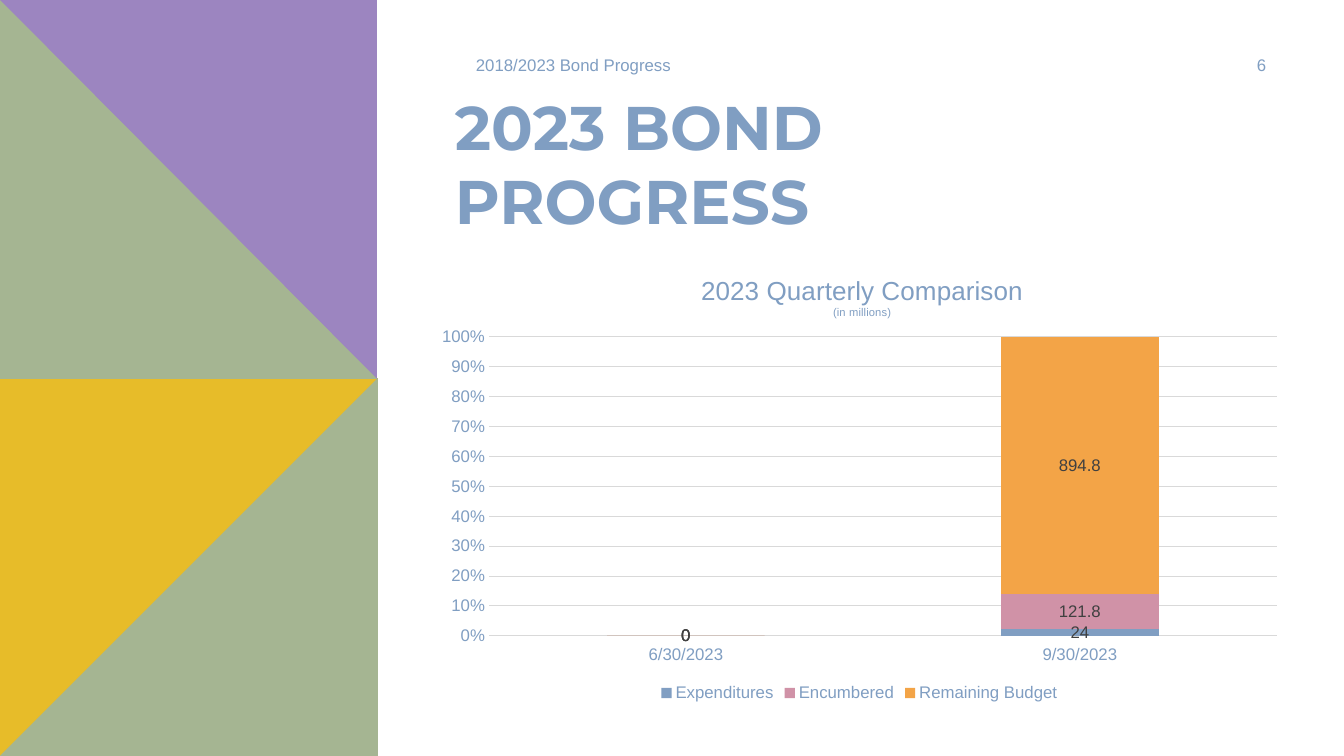
import pptx
import pptx.chart.data
import pptx.dml.color
import pptx.enum.chart
import pptx.enum.text
import pptx.oxml
import pptx.oxml.ns
import pptx.util

PX = 914400 / 100.8
SLIDE_SIZE = (1344, 756)

THEME = {
    "blue": "809EC2", "pink": "D092A7", "orange": "F3A447",
    "yellow": "E7BC29", "green": "A5B592", "purple": "9C85C0",
    "label": "404040", "grid": "D9D9D9",
    "body_font": "Arial", "title_font": "Montserrat",
    "title": 44, "chart_title": 18.6, "chart_note": 8, "body": 12,
}

PANELS = [
    ("yellow", [(0, 378), (378, 378), (378, 756), (0, 756)]),
    ("green", [(378, 378), (378, 756), (0, 756)]),
    ("purple", [(0, 0), (377, 0), (377, 379), (0, 379)]),
    ("green", [(0, 0), (377, 379), (0, 379)]),
]

TEXTS = [
    ("2023 BOND PROGRESS", (445, 84, 746, 85),
     {"size": "title", "font": "title_font", "bold": True}),
    ("2018/2023 Bond Progress", (466, 50, 353, 30), {"anchor": "MIDDLE"}),
    ("6", (1207, 50, 109, 30), {"anchor": "MIDDLE", "align": "CENTER"}),
]

CHART_BOX = (424, 252, 871, 454)
PLOT_BOX = (489, 337, 788, 299)
CHART_TITLE_AT = (698, 271)
CHART_TITLE = [("2023 Quarterly Comparison", "chart_title"),
               ("(in millions)", "chart_note")]
QUARTERS = ["6/30/2023", "9/30/2023"]
SERIES = [
    ("Expenditures", (0, 24), "blue"),
    ("Encumbered", (0, 121.8), "pink"),
    ("Remaining Budget", (0, 894.8), "orange"),
]


def px(length):
    return pptx.util.Emu(round(length * PX))


def rgb(name):
    return pptx.dml.color.RGBColor.from_string(THEME[name])


def style_font(font, size="body", color="blue", face="body_font", bold=False):
    font.size = pptx.util.Pt(THEME[size])
    font.name = THEME[face]
    font.bold = bold
    font.color.rgb = rgb(color)


def add_text(slide, text, box, size="body", font="body_font", bold=False,
             anchor="TOP", align="LEFT"):
    frame = slide.shapes.add_textbox(*map(px, box)).text_frame
    frame.word_wrap = True
    frame.vertical_anchor = getattr(pptx.enum.text.MSO_ANCHOR, anchor)
    paragraph = frame.paragraphs[0]
    paragraph.alignment = getattr(pptx.enum.text.PP_ALIGN, align)
    run = paragraph.add_run()
    run.text = text
    style_font(run.font, size, face=font, bold=bold)


def add_panel(slide, color, points):
    builder = slide.shapes.build_freeform(*points[0], scale=PX)
    builder.add_line_segments(points[1:], close=True)
    shape = builder.convert_to_shape()
    shape.shadow.inherit = False
    shape.fill.solid()
    shape.fill.fore_color.rgb = rgb(color)
    shape.line.fill.background()


def place_in_chart(element, index, box, inner=False):
    """Give a chart part a fixed place, with box in slide px."""
    left, top, width, height = CHART_BOX
    fractions = [(box[0] - left) / width, (box[1] - top) / height]
    fractions += [length / whole for length, whole in zip(box[2:], (width, height))]
    settings = [("layoutTarget", "inner")] if inner else []
    settings += [("xMode", "edge"), ("yMode", "edge")]
    settings += [(key, f"{value:.4f}") for key, value in zip("xywh", fractions)]
    for old_layout in element.findall(pptx.oxml.ns.qn("c:layout")):
        element.remove(old_layout)
    body = "".join(f'<c:{key} val="{value}"/>' for key, value in settings)
    element.insert(index, pptx.oxml.parse_xml(
        f'<c:layout {pptx.oxml.ns.nsdecls("c")}>'
        f'<c:manualLayout>{body}</c:manualLayout></c:layout>'))


def style_chart_title(chart):
    frame = chart.chart_title.text_frame
    for index, (text, size) in enumerate(CHART_TITLE):
        paragraph = frame.add_paragraph() if index else frame.paragraphs[0]
        run = paragraph.add_run()
        run.text = text
        style_font(run.font, size)
    chart.chart_title.include_in_layout = False
    title = chart.chart_title._element
    place_in_chart(title, 1, CHART_TITLE_AT)


def style_axes(chart):
    for axis in (chart.category_axis, chart.value_axis):
        axis.major_tick_mark = pptx.enum.chart.XL_TICK_MARK.NONE
        axis.minor_tick_mark = pptx.enum.chart.XL_TICK_MARK.NONE
        axis.format.line.fill.background()
        style_font(axis.tick_labels.font)
    chart.category_axis.tick_label_position = pptx.enum.chart.XL_TICK_LABEL_POSITION.LOW
    value_axis = chart.value_axis
    value_axis.tick_labels.number_format = "0%"
    value_axis.tick_labels.number_format_is_linked = False
    value_axis.has_major_gridlines = True
    grid_line = value_axis.major_gridlines.format.line
    grid_line.color.rgb = rgb("grid")
    grid_line.width = pptx.util.Pt(0.75)


def add_bond_chart(slide):
    data = pptx.chart.data.CategoryChartData()
    data.categories = QUARTERS
    for name, values, _ in SERIES:
        data.add_series(name, values)
    chart = slide.shapes.add_chart(
        pptx.enum.chart.XL_CHART_TYPE.COLUMN_STACKED_100,
        *map(px, CHART_BOX), data).chart
    style_font(chart.font)
    style_chart_title(chart)
    style_axes(chart)
    plot = chart.plots[0]
    plot.gap_width = 150
    plot.overlap = 100
    plot.vary_by_categories = False
    for series, (_, _, color) in zip(plot.series, SERIES):
        series.format.fill.solid()
        series.format.fill.fore_color.rgb = rgb(color)
        series.data_labels.show_value = True
        style_font(series.data_labels.font, color="label")
    chart.has_legend = True
    chart.legend.position = pptx.enum.chart.XL_LEGEND_POSITION.BOTTOM
    chart.legend.include_in_layout = False
    style_font(chart.legend.font)
    plot_area = chart._chartSpace.chart.plotArea
    place_in_chart(plot_area, 0, PLOT_BOX, inner=True)


def main():
    presentation = pptx.Presentation()
    presentation.slide_width, presentation.slide_height = map(px, SLIDE_SIZE)
    slide = presentation.slides.add_slide(presentation.slide_layouts[6])
    for color, points in PANELS:
        add_panel(slide, color, points)
    add_bond_chart(slide)
    for text, box, style in TEXTS:
        add_text(slide, text, box, **style)
    presentation.save("out.pptx")


if __name__ == "__main__":
    main()
